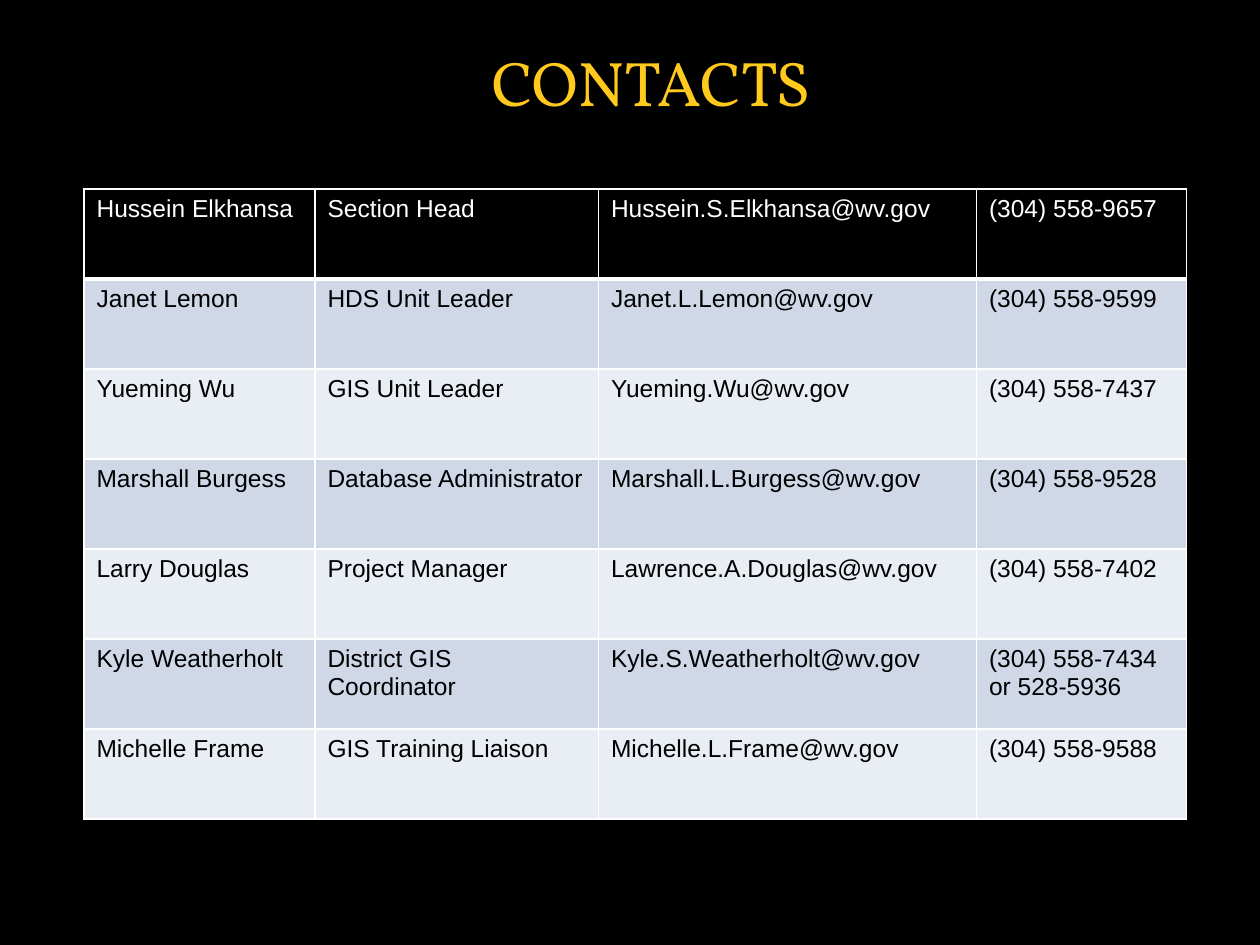
import pptx
import pptx.dml.color
import pptx.enum.text
import pptx.oxml
import pptx.oxml.ns
import pptx.util

Pt = pptx.util.Pt
RGB = pptx.dml.color.RGBColor.from_string
TEXT = pptx.enum.text

COLORS = {
    "back": "000000",
    "title": "FFC91D",
    "head": "FFFFFF",
    "body": "000000",
    "line": "FFFFFF",
    "odd": "D0D8E8",
    "even": "E9EDF4",
}

PEOPLE = [
    ("Hussein Elkhansa", "Section Head", "Hussein.S.Elkhansa@wv.gov", "(304) 558-9657"),
    ("Janet Lemon", "HDS Unit Leader", "Janet.L.Lemon@wv.gov", "(304) 558-9599"),
    ("Yueming Wu", "GIS Unit Leader", "Yueming.Wu@wv.gov", "(304) 558-7437"),
    ("Marshall Burgess", "Database Administrator", "Marshall.L.Burgess@wv.gov", "(304) 558-9528"),
    ("Larry Douglas", "Project Manager", "Lawrence.A.Douglas@wv.gov", "(304) 558-7402"),
    ("Kyle Weatherholt", "District GIS Coordinator", "Kyle.S.Weatherholt@wv.gov",
     "(304) 558-7434 or 528-5936"),
    ("Michelle Frame", "GIS Training Liaison", "Michelle.L.Frame@wv.gov", "(304) 558-9588"),
]


def apply(item, values):
    for name, value in values.items():
        setattr(item, name, value)


class Deck:
    def __init__(self, wide, high):
        self.show = pptx.Presentation()
        apply(self.show, {"slide_width": Pt(wide), "slide_height": Pt(high)})
        self.slide = self.show.slides.add_slide(self.show.slide_layouts[5])
        self.paint(self.slide.background.fill, "back")

    def paint(self, fill, color):
        fill.solid()
        fill.fore_color.rgb = RGB(COLORS[color])

    def style(self, para, face, size, color):
        font = para.runs[0].font
        apply(font, {"name": face, "size": Pt(size), "bold": False})
        font.color.rgb = RGB(COLORS[color])

    def title(self, text, left, top, width, height):
        shape = self.slide.shapes.title
        apply(shape, {"left": Pt(left), "top": Pt(top),
                      "width": Pt(width), "height": Pt(height)})
        frame = shape.text_frame
        frame.text = text
        sides = ("left", "top", "right", "bottom")
        apply(frame, {f"margin_{side}": 0 for side in sides})
        apply(frame, {"word_wrap": True,
                      "auto_size": TEXT.MSO_AUTO_SIZE.SHAPE_TO_FIT_TEXT,
                      "vertical_anchor": TEXT.MSO_ANCHOR.TOP})
        para = frame.paragraphs[0]
        apply(para, {"alignment": TEXT.PP_ALIGN.CENTER, "line_spacing": 0.9})
        self.style(para, "Vollkorn", 36, "title")

    def border(self, cell, widths):
        """Draw cell borders; widths maps the sides L, R, T, B to points."""
        props = cell._tc.get_or_add_tcPr()
        for spot, side in enumerate("LRTB"):
            props.insert(spot, pptx.oxml.parse_xml(
                f'<a:ln{side} {pptx.oxml.ns.nsdecls("a")} w="{Pt(widths[side])}">'
                f'<a:solidFill><a:srgbClr val="{COLORS["line"]}"/></a:solidFill>'
                f'</a:ln{side}>'))

    def table(self, data, left, top, widths, height):
        shape = self.slide.shapes.add_table(
            len(data), len(widths), Pt(left), Pt(top), Pt(sum(widths)), Pt(height))
        grid = shape.table
        for col, width in zip(grid.columns, widths):
            col.width = Pt(width)
        for r, texts in enumerate(data):
            grid.rows[r].height = Pt(height / len(data))
            for c, text in enumerate(texts):
                cell = grid.cell(r, c)
                cell.text = text
                self.style(cell.text_frame.paragraphs[0], "Arial", 14,
                           "body" if r else "head")
                if r:
                    self.paint(cell.fill, "odd" if r % 2 else "even")
                else:
                    cell.fill.background()
                self.border(cell, {"L": 1, "R": 1, "T": 3 if r == 1 else 1,
                                   "B": 1 if r else 3})


def main():
    deck = Deck(720, 540)
    deck.title("CONTACTS", 42, 30, 660, 39.6)
    deck.table(PEOPLE, 48, 108, (132, 162, 216, 120), 360)
    deck.show.save("out.pptx")


if __name__ == "__main__":
    main()
